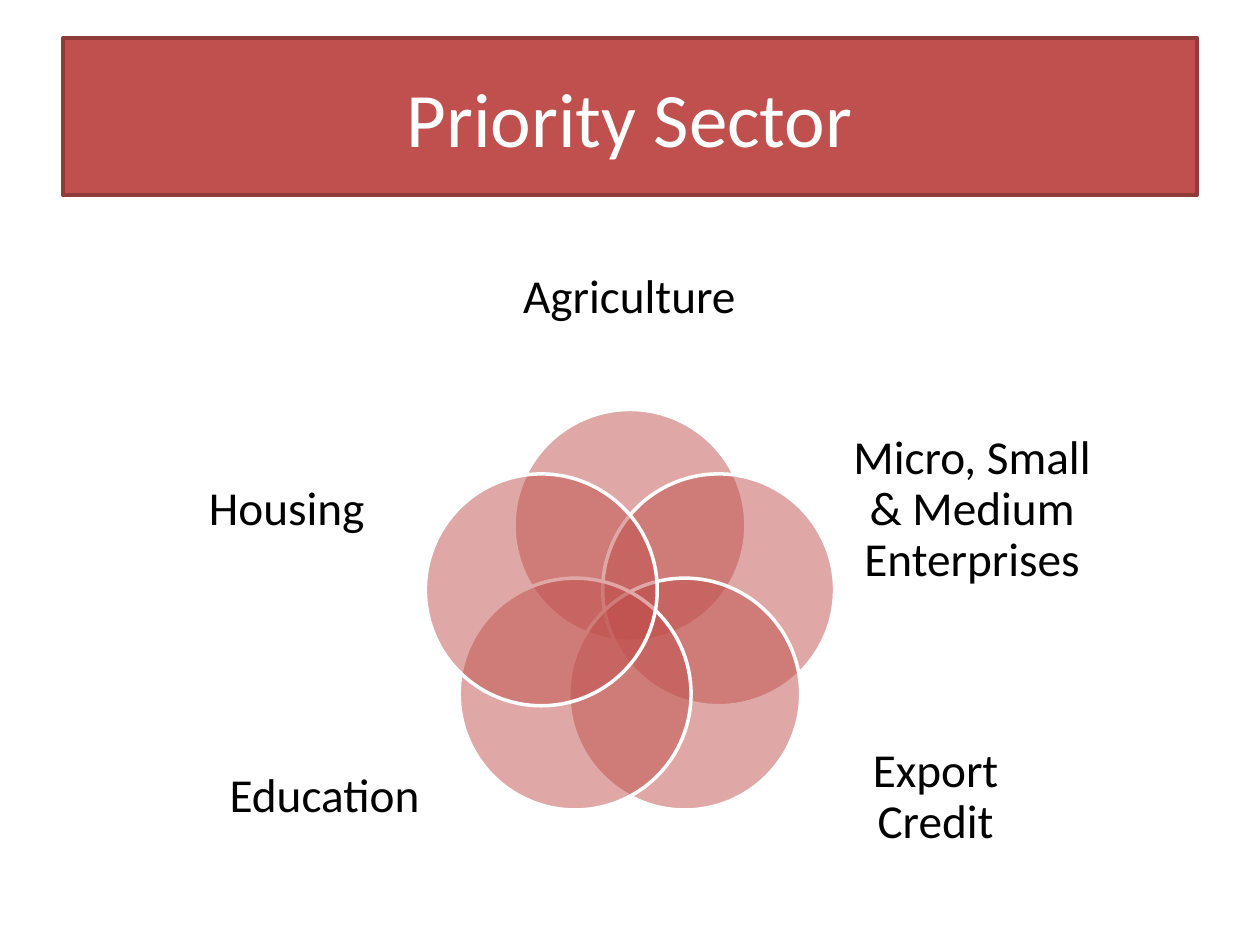
import math

import pptx
import pptx.dml.color
import pptx.enum.shapes
import pptx.enum.text
import pptx.oxml
import pptx.oxml.ns
import pptx.util

Inches = pptx.util.Inches
Pt = pptx.util.Pt
SHAPES = pptx.enum.shapes.MSO_SHAPE

# Content: sectors clockwise from the top, each with its label's left, top, width, height
TITLE = "Priority Sector"
SECTORS = [
    ("Agriculture", (3.93, 1.75, 2.13, 1.23)),
    ("Micro, Small & Medium Enterprises", (6.76, 3.38, 1.91, 1.34)),
    ("Export Credit", (6.47, 5.66, 1.91, 1.34)),
    ("Education", (1.62, 5.66, 1.91, 1.34)),
    ("Housing", (1.32, 3.38, 1.91, 1.34)),
]
RED, DARK_RED, WHITE, BLACK = "C0504D", "8E3B39", "FFFFFF", "000000"
CENTER_X, CENTER_Y = 5, 4.91
RING_RADIUS, DIAMETER = 0.74, 1.84


def color(value):
    return pptx.dml.color.RGBColor.from_string(value)


def add_filled(shapes, preset, place, line, opacity=100):
    shape = shapes.add_shape(preset, *map(Inches, place))
    shape.shadow.inherit = False
    shape.fill.solid()
    shape.fill.fore_color.rgb = color(RED)
    shape.line.color.rgb = color(line)
    shape.line.width = Pt(2)
    if opacity < 100:
        fill_color = shape._element.spPr.find(
            pptx.oxml.ns.qn("a:solidFill"))[0]
        alpha = pptx.oxml.parse_xml(
            f'<a:alpha {pptx.oxml.ns.nsdecls("a")} val="{opacity * 1000}"/>')
        fill_color.append(alpha)
    return shape


def write(box, text, size, text_color):
    frame = box.text_frame
    frame.text = text
    frame.word_wrap = True
    frame.vertical_anchor = pptx.enum.text.MSO_ANCHOR.MIDDLE
    para = frame.paragraphs[0]
    para.alignment = pptx.enum.text.PP_ALIGN.CENTER
    font = para.runs[0].font
    font.name = "Calibri"
    font.size = Pt(size)
    font.color.rgb = color(text_color)
    return para


def add_label(shapes, text, place):
    box = shapes.add_textbox(*map(Inches, place))
    frame = box.text_frame
    frame.margin_left = frame.margin_right = 0
    frame.margin_top = frame.margin_bottom = 0
    para = write(box, text, 27, BLACK)
    para.line_spacing = 0.9


def main():
    deck = pptx.Presentation()
    deck.slide_width, deck.slide_height = Inches(10), Inches(7.5)
    page = deck.slides.add_slide(deck.slide_layouts[6])

    # Title banner
    banner = add_filled(page.shapes, SHAPES.RECTANGLE,
                        (0.5, 0.3, 9, 1.25), DARK_RED)
    write(banner, TITLE, 44, WHITE)

    # Overlapping circles, evenly spaced on a ring, with their labels
    venn = page.shapes.add_group_shape()
    for index, (name, label_place) in enumerate(SECTORS):
        angle = 2 * math.pi * index / len(SECTORS)
        left = CENTER_X + RING_RADIUS * math.sin(angle) - DIAMETER / 2
        top = CENTER_Y - RING_RADIUS * math.cos(angle) - DIAMETER / 2
        add_filled(venn.shapes, SHAPES.OVAL,
                   (left, top, DIAMETER, DIAMETER), WHITE, opacity=50)
        add_label(venn.shapes, name, label_place)

    deck.save("out.pptx")


if __name__ == "__main__":
    main()
